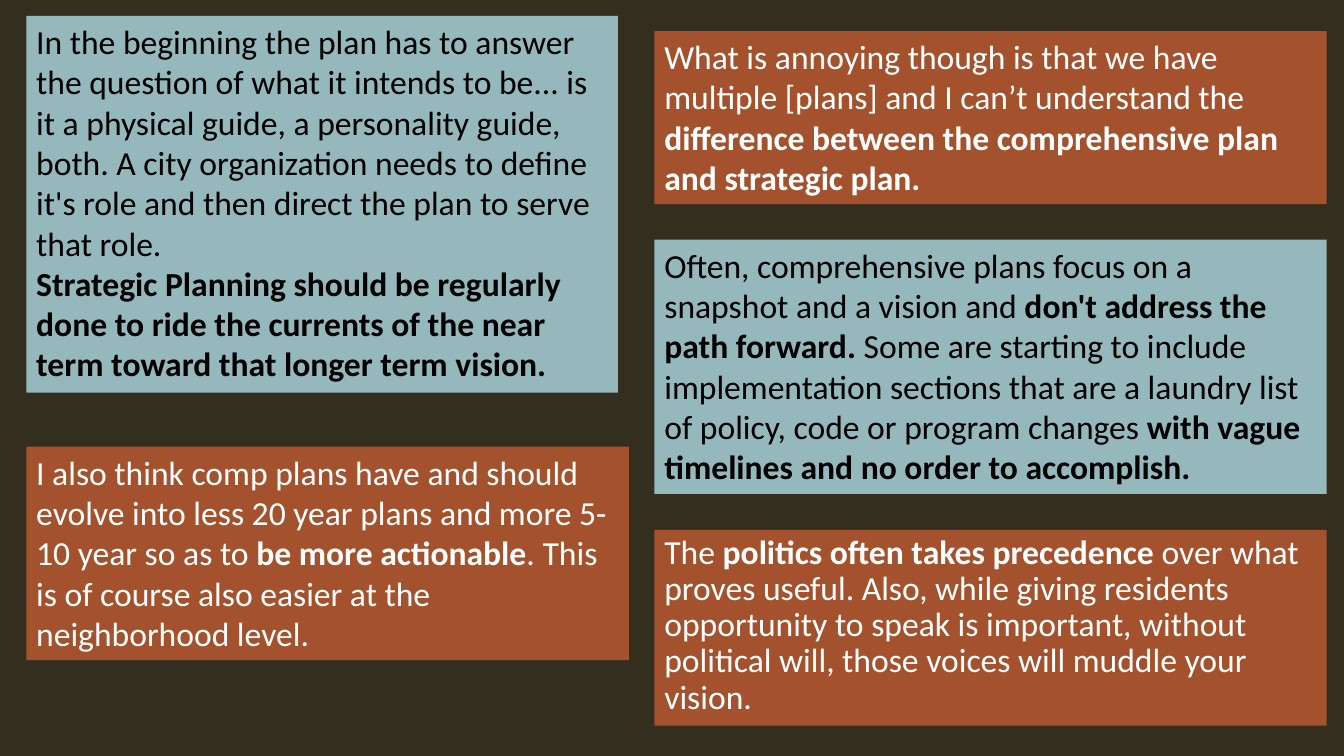
from pptx import Presentation
from pptx.dml.color import RGBColor
from pptx.enum.shapes import MSO_SHAPE
from pptx.enum.text import MSO_ANCHOR, MSO_AUTO_SIZE, PP_ALIGN
from pptx.util import Pt

# Content: each quote is a list of paragraphs, each a list of (text, bold)
ROLE = [
    [("In the beginning the plan has to answer the question of what it intends "
      "to be... is it a physical guide, a personality guide, both. A city "
      "organization needs to define it's role and then direct the plan to "
      "serve that role.", False)],
    [("Strategic Planning should be regularly done to ride the currents of "
      "the near term toward that longer term vision.", True)],
]
ACTION = [[
    ("I also think comp plans have and should evolve into less 20 year plans "
     "and more 5-10 year so as to ", False),
    ("be more actionable", True),
    (". This is of course also easier at the neighborhood level.", False),
]]
ANNOY = [[
    ("What is annoying though is that we have multiple [plans] and I can’t "
     "understand the ", False),
    ("difference between the comprehensive plan and strategic plan.", True),
]]
PATH = [[
    ("Often, comprehensive plans focus on a snapshot and a vision and ", False),
    ("don't address the path forward. ", True),
    ("Some are starting to include implementation sections that are a laundry "
     "list of policy, code or program changes ", False),
    ("with vague timelines and no order to accomplish.", True),
]]
POWER = [[
    ("The ", False),
    ("politics often takes precedence", True),
    (" over what proves useful. Also, while giving residents opportunity to "
     "speak is important, without political will, those voices will muddle "
     "your vision.", False),
]]

THEME = {
    "back": "342E1F",
    "rust": {"fill": "A4522E", "ink": "FFFFFF"},
    "teal": {"fill": "94B8BB", "ink": "000000"},
    "font": {"name": "Calibri", "size": Pt(24)},
    "frame": {
        "word_wrap": True,
        "auto_size": MSO_AUTO_SIZE.NONE,
        "vertical_anchor": MSO_ANCHOR.TOP,
        "margin_left": Pt(7.2), "margin_right": Pt(7.2),
        "margin_top": Pt(3.6), "margin_bottom": Pt(3.6),
    },
}

# Columns: left edge, then cards as (quote, tone, top, width, height, spacing)
COLUMNS = [
    (18.8, [
        (ROLE, "teal", 11.3, 422.6, 269.2, 1.0),
        (ACTION, "rust", 319, 430.4, 152.6, 1.0),
    ]),
    (467.5, [
        (ANNOY, "rust", 22.2, 480.2, 123.7, 1.0),
        (PATH, "teal", 171.2, 480.2, 181.7, 1.0),
        (POWER, "rust", 378.6, 480.2, 139.7, 0.9),
    ]),
]


def style(item, values):
    for key, value in values.items():
        setattr(item, key, value)


def paint(fill, color):
    fill.solid()
    fill.fore_color.rgb = RGBColor.from_string(color)


def add_card(slide, left, quote, tone, top, width, height, spacing):
    look = THEME[tone]
    card = slide.shapes.add_shape(
        MSO_SHAPE.RECTANGLE, Pt(left), Pt(top), Pt(width), Pt(height))
    card.shadow.inherit = False
    paint(card.fill, look["fill"])
    card.line.fill.background()
    frame = card.text_frame
    style(frame, THEME["frame"])
    for i, parts in enumerate(quote):
        para = frame.add_paragraph() if i else frame.paragraphs[0]
        style(para, {"alignment": PP_ALIGN.LEFT, "line_spacing": spacing})
        for text, bold in parts:
            run = para.add_run()
            run.text = text
            style(run.font, {**THEME["font"], "bold": bold})
            run.font.color.rgb = RGBColor.from_string(look["ink"])


def main():
    deck = Presentation()
    style(deck, {"slide_width": Pt(960), "slide_height": Pt(540)})
    slide = deck.slides.add_slide(deck.slide_layouts[6])
    paint(slide.background.fill, THEME["back"])

    # Quote cards
    for left, cards in COLUMNS:
        for card in cards:
            add_card(slide, left, *card)

    deck.save("out.pptx")


if __name__ == "__main__":
    main()
